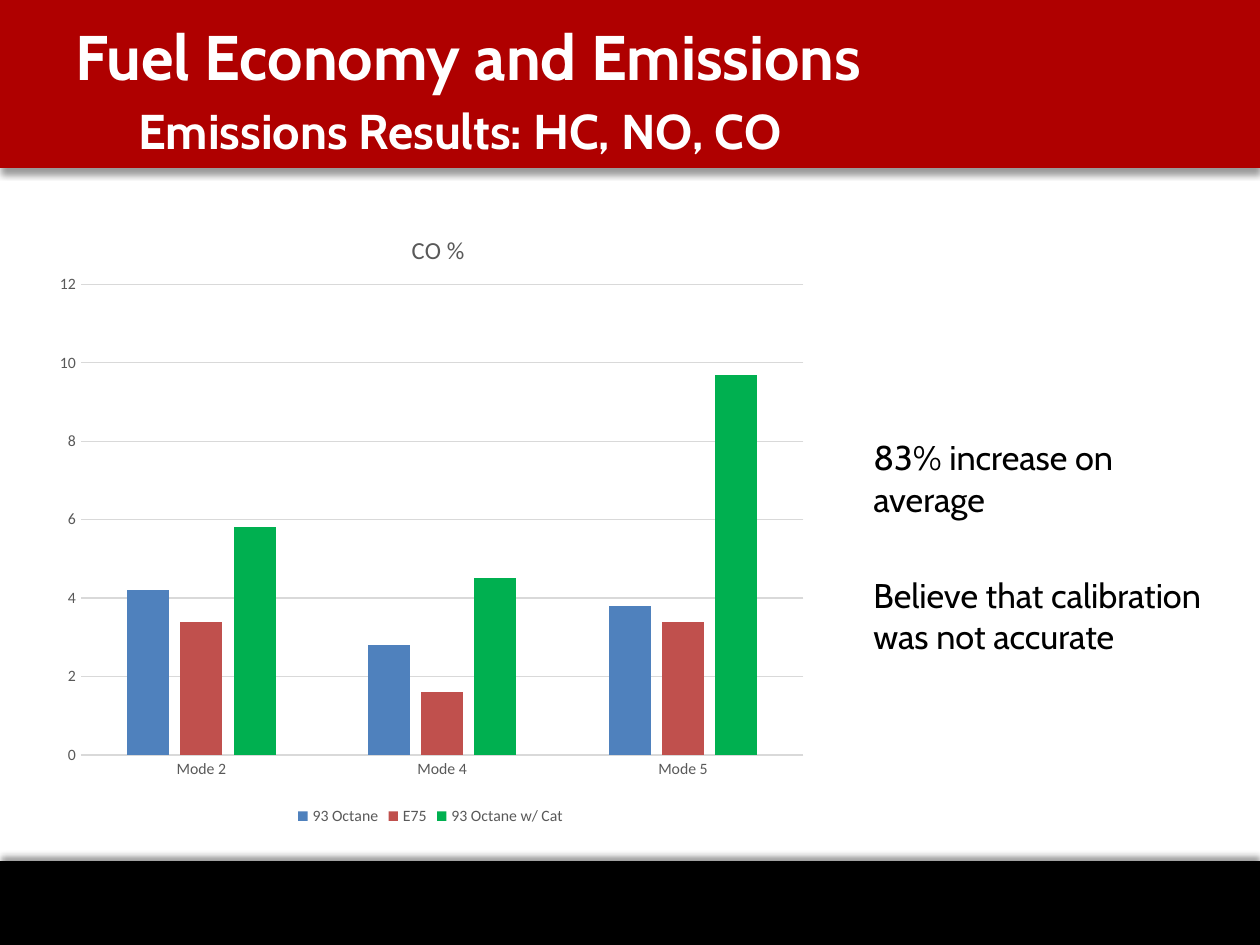
from dataclasses import dataclass

from lxml import etree
from pptx import Presentation
from pptx.chart.data import CategoryChartData
from pptx.dml.color import RGBColor
from pptx.enum.chart import XL_CHART_TYPE, XL_LEGEND_POSITION, XL_TICK_MARK
from pptx.enum.shapes import MSO_SHAPE
from pptx.enum.text import MSO_ANCHOR, MSO_AUTO_SIZE, PP_ALIGN
from pptx.oxml.ns import qn
from pptx.util import Pt

COLUMNS = XL_CHART_TYPE.COLUMN_CLUSTERED
LEGEND_BOTTOM = XL_LEGEND_POSITION.BOTTOM
NO_TICK = XL_TICK_MARK.NONE
RECTANGLE = MSO_SHAPE.RECTANGLE
MIDDLE, TOP = MSO_ANCHOR.MIDDLE, MSO_ANCHOR.TOP
NO_FIT = MSO_AUTO_SIZE.NONE
LEFT = PP_ALIGN.LEFT
TITLE_ONLY = 5


@dataclass(frozen=True)
class Theme:
    """Colours, fonts and type sizes of the slide."""
    band: str = "AF0000"
    footer: str = "000000"
    heading: str = "FFFFFF"
    text: str = "000000"
    label: str = "595959"
    rule: str = "D9D9D9"
    series: tuple = ("4F81BD", "C0504D", "00B050")
    text_font: str = "Cabin"
    chart_font: str = "Calibri"
    title_size: float = 36
    tab_size: float = 32.4
    subtitle_size: float = 27.9
    body_size: float = 19.6
    chart_title_size: float = 14
    label_size: float = 9


THEME = Theme()
CATEGORIES = ("Mode 2", "Mode 4", "Mode 5")
CO_PERCENT = {
    "93 Octane": (4.2, 2.8, 3.8),
    "E75": (3.4, 1.6, 3.4),
    "93 Octane w/ Cat": (5.8, 4.5, 9.7),
}


def set_values(target, values):
    """Set each named attribute of the target."""
    for name, value in values.items():
        setattr(target, name, value)


def style_font(font, name, size, color, bold=False):
    """Apply typeface, size, colour and weight to a font."""
    set_values(font, {"name": name, "size": Pt(size), "bold": bold})
    font.color.rgb = RGBColor.from_string(color)


def place(shape, box):
    """Move a shape to a box given in points."""
    sides = ("left", "top", "width", "height")
    set_values(shape, dict(zip(sides, map(Pt, box))))


def add_band(page, box, color, shadow_angle):
    """Add a full-width band that casts a soft shadow."""
    band = page.shapes.add_shape(RECTANGLE, *map(Pt, box))
    band.fill.solid()
    band.fill.fore_color.rgb = RGBColor.from_string(color)
    band.line.fill.background()
    band.shadow.inherit = False
    effects = band.element.spPr.find(qn("a:effectLst"))
    shadow = etree.SubElement(
        effects, qn("a:outerShdw"), blurRad=str(Pt(4)), dist=str(Pt(3)),
        dir=str(shadow_angle * 60000), algn="t", rotWithShape="0")
    black = etree.SubElement(shadow, qn("a:srgbClr"), val="000000")
    etree.SubElement(black, qn("a:alpha"), val="40000")


def add_heading(page, box):
    """Fill the title placeholder and raise it above the bands."""
    title = page.shapes.title
    place(title, box)
    page.shapes.element.append(title.element)
    frame = title.text_frame
    set_values(frame, {"vertical_anchor": MIDDLE, "word_wrap": True,
                       "auto_size": NO_FIT})
    para = frame.paragraphs[0]
    para.alignment = LEFT
    spans = (("Fuel Economy and Emissions", THEME.title_size),
             ("\t", THEME.tab_size),
             ("Emissions Results: HC, NO, CO", THEME.subtitle_size))
    for index, (text, size) in enumerate(spans):
        if index == 1:
            para.add_line_break()
        span = para.add_run()
        span.text = text
        style_font(span.font, THEME.text_font, size, THEME.heading, True)


def add_findings(page, box):
    """Add the remarks beside the chart."""
    frame = page.shapes.add_textbox(*map(Pt, box)).text_frame
    set_values(frame, {"word_wrap": True, "vertical_anchor": TOP})
    remarks = ("83% increase on average",
               "Believe that calibration was not accurate")
    for index, text in enumerate(remarks):
        para = frame.add_paragraph() if index else frame.paragraphs[0]
        if index:
            para.space_before = Pt(31.4)
        span = para.add_run()
        span.text = text
        style_font(span.font, THEME.text_font, THEME.body_size, THEME.text)


def set_layout(parent, values):
    """Give a chart part a manual layout in fractions of the chart."""
    layout = parent.find(qn("c:layout"))
    if layout is None:
        layout = etree.Element(qn("c:layout"))
        parent.insert(0, layout)
    manual = etree.SubElement(layout, qn("c:manualLayout"))
    for name, value in values.items():
        etree.SubElement(manual, qn(f"c:{name}"), val=str(value))


def style_axes(chart):
    """Format both axes and the gridlines."""
    for axis in (chart.category_axis, chart.value_axis):
        set_values(axis, {"major_tick_mark": NO_TICK,
                          "minor_tick_mark": NO_TICK})
        style_font(axis.tick_labels.font, THEME.chart_font,
                   THEME.label_size, THEME.label)
    values = chart.value_axis
    set_values(values, {"minimum_scale": 0, "maximum_scale": 12,
                        "major_unit": 2, "has_major_gridlines": True})
    values.format.line.fill.background()
    for part in (chart.category_axis, values.major_gridlines):
        part.format.line.color.rgb = RGBColor.from_string(THEME.rule)
        part.format.line.width = Pt(0.75)


def add_emissions_chart(page, box):
    """Add the clustered column chart of CO by mode and fuel."""
    data = CategoryChartData(number_format="General")
    data.categories = CATEGORIES
    for name, values in CO_PERCENT.items():
        data.add_series(name, values)
    chart = page.shapes.add_chart(COLUMNS, *map(Pt, box), data).chart
    style_font(chart.font, THEME.chart_font, 10, THEME.text)
    set_values(chart, {"has_title": True, "has_legend": True})
    para = chart.chart_title.text_frame.paragraphs[0]
    span = para.add_run()
    span.text = "CO %"
    style_font(span.font, THEME.chart_font, THEME.chart_title_size, THEME.label)
    set_layout(chart.chart_title.element,
               {"xMode": "edge", "yMode": "edge", "x": 0.47, "y": 0.04})
    set_layout(chart.element.find(".//" + qn("c:plotArea")),
               {"layoutTarget": "inner", "xMode": "edge", "yMode": "edge",
                "x": 0.05, "y": 0.13, "w": 0.93, "h": 0.75})
    set_values(chart.legend, {"position": LEGEND_BOTTOM,
                              "include_in_layout": False})
    style_font(chart.legend.font, THEME.chart_font,
               THEME.label_size, THEME.label)
    plot = chart.plots[0]
    set_values(plot, {"gap_width": 219, "overlap": -27,
                      "vary_by_categories": False})
    for series, color in zip(plot.series, THEME.series):
        series.format.fill.solid()
        series.format.fill.fore_color.rgb = RGBColor.from_string(color)
    style_axes(chart)


def main():
    """Build and save the slide."""
    deck = Presentation()
    set_values(deck, {"slide_width": Pt(720), "slide_height": Pt(540)})
    page = deck.slides.add_slide(deck.slide_layouts[TITLE_ONLY])
    add_band(page, (0, 492, 720, 48), THEME.footer, 270)
    add_band(page, (0, 0, 720, 96), THEME.band, 90)
    add_findings(page, (492, 246, 204, 133))
    add_heading(page, (36, 12, 594, 78))
    add_emissions_chart(page, (24, 116, 444, 358.5))
    deck.save("out.pptx")


if __name__ == "__main__":
    main()
